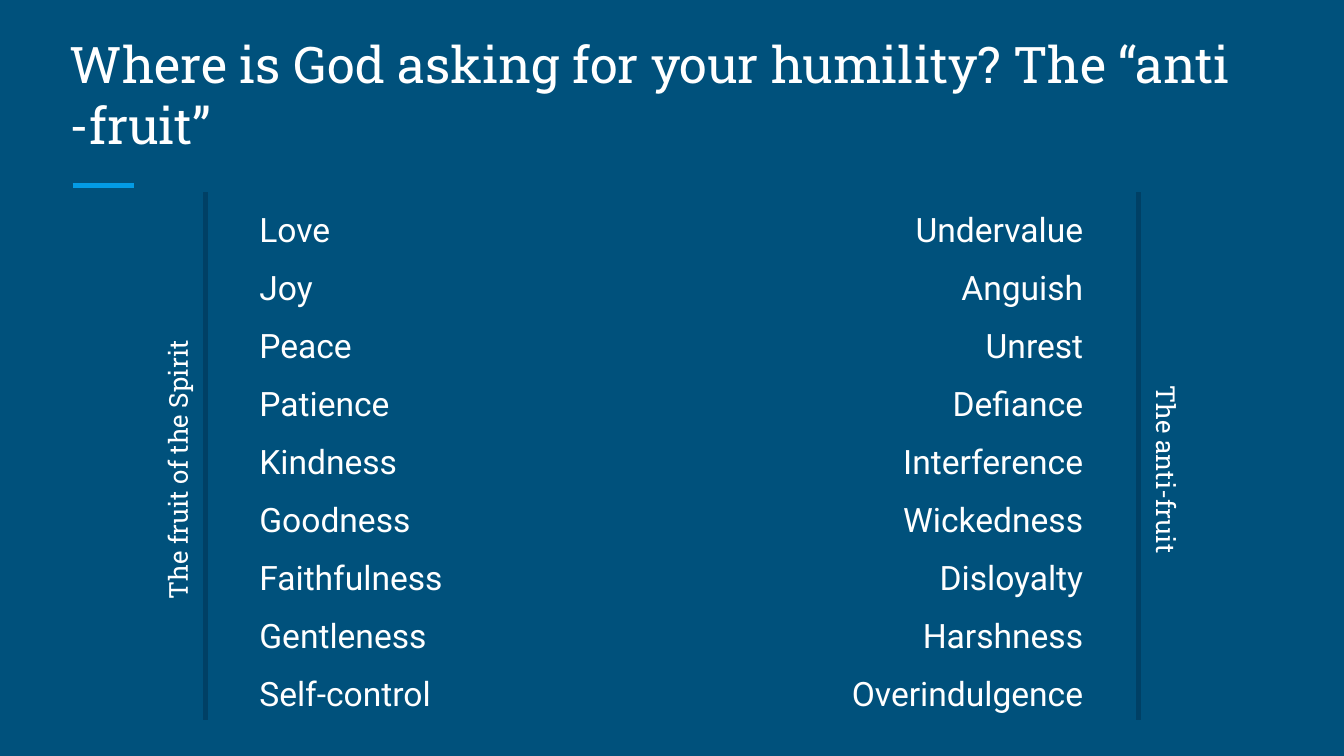
from dataclasses import dataclass

from pptx import Presentation
from pptx.dml.color import RGBColor
from pptx.enum.shapes import MSO_CONNECTOR
from pptx.enum.text import MSO_ANCHOR, MSO_AUTO_SIZE, PP_ALIGN
from pptx.oxml.ns import qn
from pptx.util import Inches, Pt
from lxml.etree import SubElement


@dataclass(frozen=True)
class Theme:
    """Colours, fonts and type sizes of the deck."""
    background: RGBColor = RGBColor.from_string("00517C")
    accent: RGBColor = RGBColor.from_string("039BE5")
    rail: RGBColor = RGBColor.from_string("004065")
    text: RGBColor = RGBColor.from_string("FFFFFF")
    heading_font: str = "Roboto Slab"
    body_font: str = "Roboto"
    title_size: int = 27
    body_size: int = 18
    label_size: int = 14
    line_width: int = 3


@dataclass(frozen=True)
class Box:
    """A region of the page, in inches."""
    left: float
    top: float
    width: float
    height: float


THEME = Theme()
TITLE = "Where is God asking for your humility? The “anti -fruit”"
LABELS = [("The fruit of the Spirit", 270), ("The anti-fruit", 90)]
PAIRS = [
    ("Love", "Undervalue"),
    ("Joy", "Anguish"),
    ("Peace", "Unrest"),
    ("Patience", "Defiance"),
    ("Kindness", "Interference"),
    ("Goodness", "Wickedness"),
    ("Faithfulness", "Disloyalty"),
    ("Gentleness", "Harshness"),
    ("Self-control", "Overindulgence"),
]


def style_text(frame, font, size, align):
    """Align and format every run of a text frame."""
    for para in frame.paragraphs:
        para.alignment = align
        for span in para.runs:
            span.font.name = font
            span.font.size = Pt(size)
            span.font.color.rgb = THEME.text


def set_frame(frame, anchor):
    """Give a text frame even insets, wrapping and a fixed size."""
    frame.auto_size = MSO_AUTO_SIZE.NONE
    frame.word_wrap = True
    frame.vertical_anchor = anchor
    frame.margin_left = frame.margin_right = Inches(0.1)
    frame.margin_top = frame.margin_bottom = Inches(0.1)


def add_line(page, start, end, color):
    """Draw a straight line without a shadow."""
    line = page.shapes.add_connector(
        MSO_CONNECTOR.STRAIGHT, *(Inches(value) for value in start + end))
    line.line.color.rgb = color
    line.line.width = Pt(THEME.line_width)
    SubElement(line._element.spPr, qn("a:effectLst"))


def add_title(page, box):
    """Place the title and the short accent rule below it."""
    rule_left, rule_top = box.left + 0.12, box.top + 0.88
    add_line(page, (rule_left, rule_top), (rule_left + 0.46, rule_top), THEME.accent)
    title = page.shapes.title
    title.left, title.top = Inches(box.left), Inches(box.top)
    title.width, title.height = Inches(box.width), Inches(box.height)
    frame = title.text_frame
    frame.text = TITLE
    set_frame(frame, MSO_ANCHOR.BOTTOM)
    frame.paragraphs[0].line_spacing = 1.0
    style_text(frame, THEME.heading_font, THEME.title_size, PP_ALIGN.LEFT)


def clear_cell(cell):
    """Remove the borders and the fill of a table cell."""
    properties = cell._tc.get_or_add_tcPr()
    for side in ("a:lnL", "a:lnR", "a:lnT", "a:lnB"):
        SubElement(SubElement(properties, qn(side)), qn("a:noFill"))
    cell.fill.background()


def add_pairs(page, box):
    """Set each fruit against its opposite in a plain two-column table."""
    table = page.shapes.add_table(
        len(PAIRS), 2, Inches(box.left), Inches(box.top),
        Inches(box.width), Inches(box.height)).table
    table.first_row = table.horz_banding = False
    for row, pair in enumerate(PAIRS):
        for column, align in enumerate((PP_ALIGN.LEFT, PP_ALIGN.RIGHT)):
            cell = table.cell(row, column)
            cell.text_frame.text = pair[column]
            cell.margin_left = cell.margin_right = Inches(0.1)
            cell.margin_top = cell.margin_bottom = Inches(0.02)
            style_text(cell.text_frame, THEME.body_font, THEME.body_size, align)
            clear_cell(cell)


def add_sides(page, box):
    """Flank the box with two rails, each with a turned label outside it."""
    length, depth, offset = 3.57, 0.71, 0.21
    middle = box.top + box.height / 2 + 0.1
    right = box.left + box.width
    centers = (box.left - offset, right + offset)
    for center, (text, turn) in zip(centers, LABELS):
        label = page.shapes.add_textbox(
            Inches(center - length / 2), Inches(middle - depth / 2),
            Inches(length), Inches(depth))
        label.rotation = turn
        label.text_frame.text = text
        set_frame(label.text_frame, MSO_ANCHOR.MIDDLE)
        style_text(label.text_frame, THEME.heading_font, THEME.label_size,
                   PP_ALIGN.CENTER)
    for x in (box.left, right):
        add_line(page, (x, box.top), (x, box.top + box.height), THEME.rail)


def main():
    """Build the one-slide deck and save it."""
    deck = Presentation()
    deck.slide_width = Inches(10)
    deck.slide_height = deck.slide_width * 9 // 16
    page = deck.slides.add_slide(deck.slide_layouts[5])
    page.background.fill.solid()
    page.background.fill.fore_color.rgb = THEME.background
    add_title(page, Box(0.42, 0.5, 9.15, 0.75))
    add_pairs(page, Box(1.83, 1.55, 6.33, 3.89))
    add_sides(page, Box(1.53, 1.43, 6.94, 3.93))
    deck.save("out.pptx")


if __name__ == "__main__":
    main()
